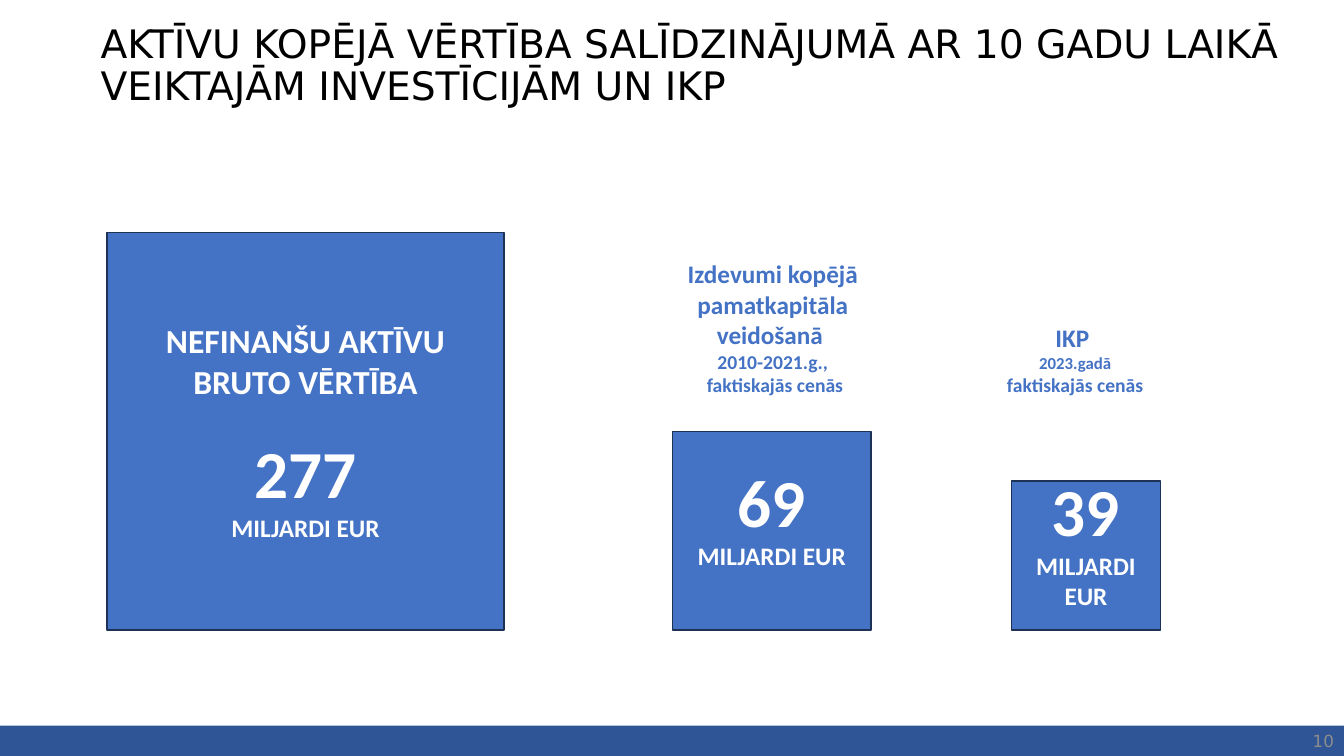
from math import sqrt

from pptx import Presentation
from pptx.dml.color import RGBColor
from pptx.enum.shapes import MSO_SHAPE
from pptx.enum.text import MSO_ANCHOR, PP_ALIGN
from pptx.util import Inches, Pt

RECT = MSO_SHAPE.RECTANGLE
MIDDLE = MSO_ANCHOR.MIDDLE
LEFT, CENTER, RIGHT = PP_ALIGN.LEFT, PP_ALIGN.CENTER, PP_ALIGN.RIGHT

WIDTH, HEIGHT = Inches(13.33), Inches(7.5)
COL, ROW = WIDTH / 100, HEIGHT / 100  # one percent of the slide
BASE = 83.33 * ROW  # the squares stand on this line
UNIT = 29.56 * COL / sqrt(277)  # side of a square worth one billion
GAP = Pt(22)  # one empty 18 pt line

COLORS = {
    "bar": "2F5597",
    "square": "4472C4",
    "edge": "1E3256",
    "white": "FFFFFF",
    "black": "000000",
    "grey": "8C8C8C",
}
BODY, HEAD = "Calibri", "DejaVu Sans"


def color(name):
    return RGBColor.from_string(COLORS[name])


def write(shape, lines, ink, font=BODY, bold=True, align=CENTER):
    """Fill a shape with (text, size) paragraphs and return its frame."""
    frame = shape.text_frame
    frame.word_wrap = True
    frame.vertical_anchor = MIDDLE
    frame.text = "\n".join(text for text, size in lines)
    for par, (text, size) in zip(frame.paragraphs, lines):
        par.alignment = align
        for run in par.runs:
            run.font.name = font
            run.font.size = Pt(size)
            run.font.bold = bold
            run.font.color.rgb = color(ink)
    return frame


def add_box(slide, left, top, width, height, fill, edge=None):
    box = slide.shapes.add_shape(
        RECT, int(left), int(top), int(width), int(height))
    box.shadow.inherit = False
    box.fill.solid()
    box.fill.fore_color.rgb = color(fill)
    if edge:
        box.line.color.rgb = color(edge)
        box.line.width = Pt(1)
    else:
        box.line.fill.background()
    return box


def add_text(slide, left, top, width, height):
    return slide.shapes.add_textbox(
        int(left * COL), int(top * ROW), int(width * COL), int(height * ROW))


def add_square(slide, center, value, name=None):
    """Draw a square whose area follows its value."""
    side = UNIT * sqrt(value)
    box = add_box(slide, center * COL - side / 2, BASE - side, side, side,
                  "square", "edge")
    lines = [(str(value), 48), ("MILJARDI EUR", 18)]
    if name:
        frame = write(box, [(name, 24)] + lines, "white")
        frame.paragraphs[1].space_before = GAP
    else:
        frame = write(box, lines, "white")
        frame.margin_bottom += GAP


def add_label(slide, center, top, height, lines):
    width = 16.13
    box = add_text(slide, center - width / 2, top, width, height)
    write(box, lines, "square")


def add_title(slide, text):
    box = add_text(slide, 6.75, 3.07, 90.1, 11.47)
    frame = write(box, [(text, 28)], "black", HEAD, False, LEFT)
    frame.paragraphs[0].line_spacing = 0.9


def add_bar(slide, page):
    bar = add_box(slide, 0, 96 * ROW, WIDTH, 4 * ROW, "bar")
    write(bar, [(page, 12)], "grey", HEAD, False, RIGHT)


def main():
    deck = Presentation()
    deck.slide_width, deck.slide_height = WIDTH, HEIGHT
    slide = deck.slides.add_slide(deck.slide_layouts[6])

    add_bar(slide, "10")
    add_title(slide, "AKTĪVU KOPĒJĀ VĒRTĪBA SALĪDZINĀJUMĀ AR 10 GADU LAIKĀ "
                     "VEIKTAJĀM INVESTĪCIJĀM UN IKP")
    add_square(slide, 22.73, 277, "NEFINANŠU AKTĪVU BRUTO VĒRTĪBA")
    add_label(slide, 57.5, 30.67, 25.33, [
        ("Izdevumi kopējā pamatkapitāla veidošanā ", 18),
        ("2010-2021.g.,", 14),
        (" faktiskajās cenās", 14),
    ])
    add_square(slide, 57.43, 69)
    add_label(slide, 80, 38.93, 17.2, [
        ("IKP ", 18),
        ("2023.gadā", 12),
        ("faktiskajās cenās", 14),
    ])
    add_square(slide, 80.8, 39)
    deck.save("out.pptx")


if __name__ == "__main__":
    main()
